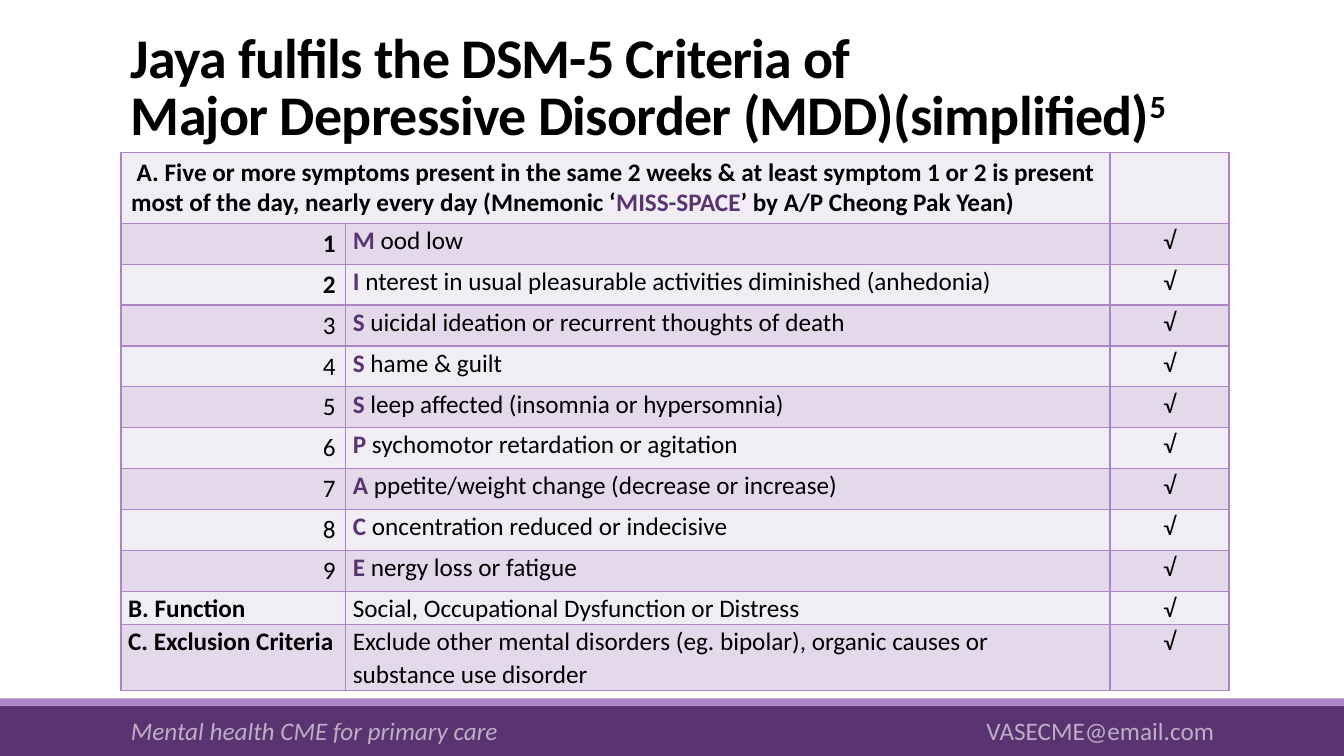
from dataclasses import dataclass

from lxml.etree import SubElement
from pptx import Presentation
from pptx.dml.color import RGBColor
from pptx.enum.shapes import MSO_SHAPE
from pptx.enum.text import MSO_ANCHOR, PP_ALIGN
from pptx.oxml import parse_xml
from pptx.oxml.ns import nsdecls, qn
from pptx.util import Inches, Pt


@dataclass(frozen=True)
class Theme:
    font: str = "Calibri"
    title: int = 40
    body: int = 18
    text: str = "000000"
    white: str = "FFFFFF"
    dark: str = "5A3471"
    accent: str = "AD84C6"
    bands: tuple = ("F1EDF5", "E3D9EA")


T = Theme()
COLS, ROWS = 133.3, 75  # slide grid, ten steps to the inch
CHECK = "√"

SYMPTOMS = [
    ("M ", "ood low"),
    ("I ", "nterest in usual pleasurable activities diminished (anhedonia)"),
    ("S ", "uicidal ideation or recurrent thoughts of death"),
    ("S ", "hame & guilt"),
    ("S ", "leep affected (insomnia or hypersomnia)"),
    ("P ", "sychomotor retardation or agitation"),
    ("A ", "ppetite/weight change (decrease or increase)"),
    ("C ", "oncentration reduced or indecisive"),
    ("E ", "nergy loss or fatigue"),
]
OTHER_CRITERIA = [
    ("B. Function", ["Social, Occupational Dysfunction or Distress"]),
    ("C. Exclusion Criteria",
     ["Exclude other mental disorders (eg. bipolar), organic causes or",
      "substance use disorder"]),
]


def grid(*steps):
    return [Inches(n / 10) for n in steps]


def style(font, size=T.body, color=T.text, bold=False, italic=False):
    font.name, font.size, font.bold, font.italic = T.font, Pt(size), bold, italic
    font.color.rgb = RGBColor.from_string(color)


def add_run(p, text, **look):
    r = p.add_run()
    r.text = text
    style(r.font, **look)
    return r


def add_text_box(s, box):
    tf = s.shapes.add_textbox(*grid(*box)).text_frame
    tf.word_wrap = True
    return tf


def add_title(s, box):
    tf = add_text_box(s, box)
    tf.vertical_anchor = MSO_ANCHOR.BOTTOM
    p = tf.paragraphs[0]
    p.line_spacing = 0.85
    look = dict(size=T.title, bold=True)
    first = add_run(p, "Jaya fulfils the DSM-5 Criteria of", **look)
    p.add_line_break()
    second = add_run(p, "Major Depressive Disorder (MDD)(simplified)", **look)
    note = add_run(p, "5", **look)
    for r in (first, second, note):
        r.font._element.set("spc", "-50")
    note.font._element.set("baseline", "30000")


def add_footer(s, box):
    x, y, w, h = box
    # Purple bar with its lighter edge
    for top, height, color in ((y, h, T.dark), (y - 0.7, 0.7, T.accent)):
        bar = s.shapes.add_shape(MSO_SHAPE.RECTANGLE, *grid(x, top, w, height))
        bar.shadow.inherit = False
        bar.fill.solid()
        bar.fill.fore_color.rgb = RGBColor.from_string(color)
        bar.line.fill.background()
    # Course name and address
    left, half = x + 12, 54.7
    for column, text, align, italic in (
            (0, "Mental health CME for primary care", PP_ALIGN.LEFT, True),
            (1, "VASECME@email.com", PP_ALIGN.RIGHT, False)):
        tf = add_text_box(s, (left + column * half, y + 0.5, half, h - 1))
        p = tf.paragraphs[0]
        p.alignment = align
        r = add_run(p, text, color=T.white, italic=italic)
        color = r.font._element.find(".//" + qn("a:srgbClr"))
        SubElement(color, qn("a:alpha"), val="60000")


def set_borders(cell):
    tcPr = cell._tc.get_or_add_tcPr()
    for i, side in enumerate("LRTB"):
        tcPr.insert(i, parse_xml(
            f'<a:ln{side} {nsdecls("a")} w="12700"><a:solidFill>'
            f'<a:srgbClr val="{T.accent}"/></a:solidFill></a:ln{side}>'))


def fill_cell(cell, lines, align=PP_ALIGN.LEFT, tight=True):
    """Each line is a list of (text, look) runs."""
    if tight:
        cell.margin_left = cell.margin_right = Inches(0.07)
        cell.margin_top = cell.margin_bottom = 0
    tf = cell.text_frame
    for i, runs in enumerate(lines):
        p = tf.add_paragraph() if i else tf.paragraphs[0]
        p.alignment = align
        if tight:
            p.line_spacing = 1.07
        for text, look in runs:
            add_run(p, text, **look)


def add_criteria_table(s, box):
    heights = [7.05] + [4.06] * len(SYMPTOMS) + [3.3, 6.5]
    table = s.shapes.add_table(len(heights), 3, *grid(*box, sum(heights))).table
    table.first_row = table.horz_banding = False
    for column, width in zip(table.columns, grid(22.3, 75.8, 11.8)):
        column.width = width
    for i, (row, height) in enumerate(zip(table.rows, grid(*heights))):
        row.height = height
        for cell in row.cells:
            cell.fill.solid()
            cell.fill.fore_color.rgb = RGBColor.from_string(T.bands[i % 2])
            set_borders(cell)
        if i:
            fill_cell(row.cells[2], [[(CHECK, {})]], PP_ALIGN.CENTER)

    # Criterion A heading
    bold, letter = dict(bold=True), dict(bold=True, color=T.dark)
    table.cell(0, 0).merge(table.cell(0, 1))
    fill_cell(table.cell(0, 0), [[
        (" A. Five or more symptoms present in the same 2 weeks & at least "
         "symptom 1 or 2 is present most of the day, nearly every day "
         "(Mnemonic ‘", bold),
        ("MISS-SPACE", letter),
        ("’ by A/P Cheong Pak Yean)", bold)]], tight=False)

    # Numbered symptoms, the two core ones in bold
    for n, (initial, rest) in enumerate(SYMPTOMS, 1):
        fill_cell(table.cell(n, 0), [[(str(n), dict(bold=n <= 2))]],
                  PP_ALIGN.RIGHT, tight=False)
        fill_cell(table.cell(n, 1), [[(initial, letter), (rest, {})]])

    # Criteria B and C
    for n, (name, lines) in enumerate(OTHER_CRITERIA, len(SYMPTOMS) + 1):
        fill_cell(table.cell(n, 0), [[(name, bold)]])
        fill_cell(table.cell(n, 1), [[(line, {})] for line in lines])


def main():
    prs = Presentation()
    prs.slide_width, prs.slide_height = grid(COLS, ROWS)
    s = prs.slides.add_slide(prs.slide_layouts[6])
    add_footer(s, (0, 70, COLS, 5))
    add_title(s, (12, 1.5, 110, 13.6))
    add_criteria_table(s, (12, 15.1, 110))
    prs.save("out.pptx")


if __name__ == "__main__":
    main()
